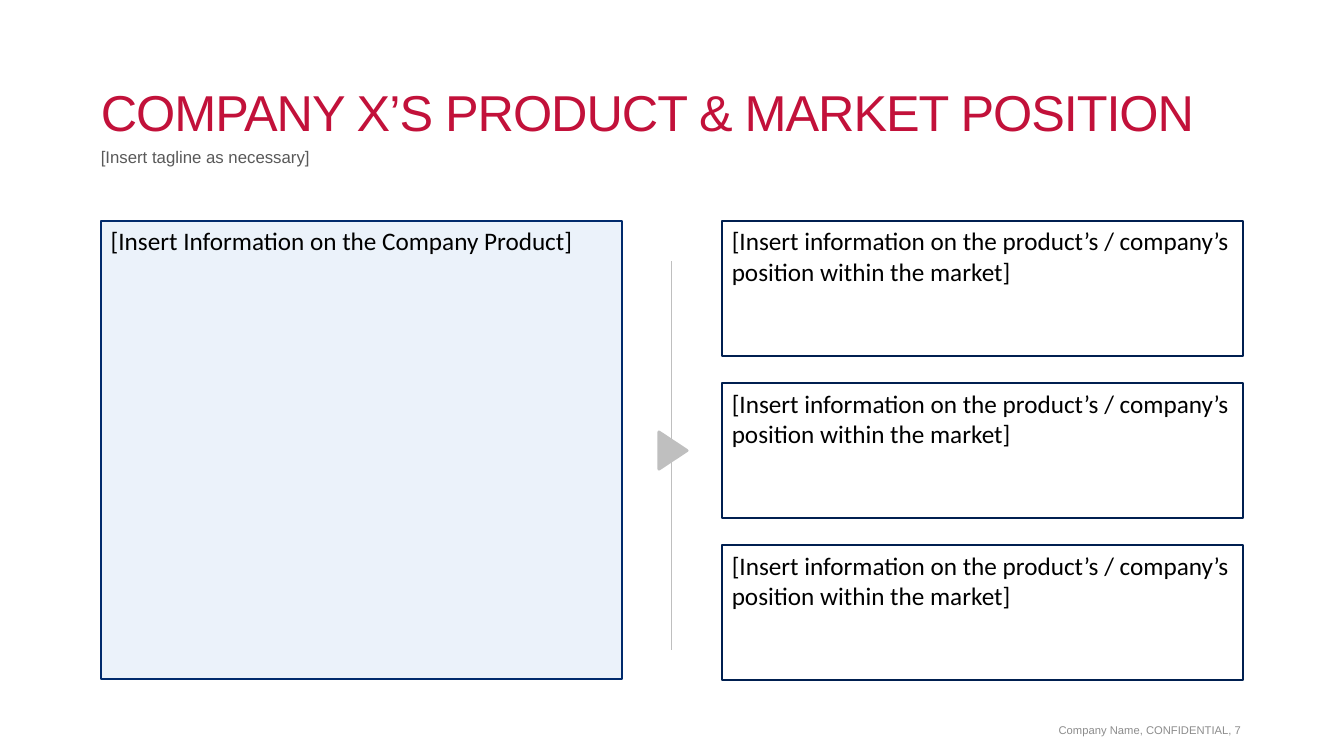
from lxml import etree
from pptx import Presentation
from pptx.dml.color import RGBColor
from pptx.enum.shapes import MSO_CONNECTOR, MSO_SHAPE
from pptx.enum.text import MSO_ANCHOR, PP_ALIGN
from pptx.oxml.ns import qn
from pptx.util import Inches, Pt

LEFT, RIGHT = PP_ALIGN.LEFT, PP_ALIGN.RIGHT
TOP, MIDDLE, BOTTOM = MSO_ANCHOR.TOP, MSO_ANCHOR.MIDDLE, MSO_ANCHOR.BOTTOM

# Content
TITLE = "COMPANY X’S PRODUCT & MARKET POSITION"
TAGLINE = "[Insert tagline as necessary]"
FOOTER = "Company Name, CONFIDENTIAL, 7"
PRODUCT = "[Insert Information on the Company Product]"
POSITIONS = ["[Insert information on the product’s / company’s position within the market]"] * 3

# Layout in inches
MARGIN, TEXT_WIDTH = 1, 11.33
BOX_TOP, BOX_WIDTH = 2.19, 5.17
PRODUCT_HEIGHT = 4.55
POSITION_LEFT, POSITION_HEIGHT, POSITION_STEP = 7.16, 1.34, 1.61
DIVIDER_X, DIVIDER_TOP, DIVIDER_BOTTOM = 6.66, 2.59, 6.45
GREY = "BFBFBF"


def color(value):
    return RGBColor.from_string(value)


def set_text(shape, text, size, font, fill, align=LEFT, anchor=TOP, spacing=None):
    frame = shape.text_frame
    frame.word_wrap = True
    frame.vertical_anchor = anchor
    paragraph = frame.paragraphs[0]
    paragraph.alignment = align
    run = paragraph.add_run()
    run.text = text
    paragraph.font.size = Pt(size)
    paragraph.font.name = font
    paragraph.font.color.rgb = color(fill)
    if spacing:
        run.font._element.set("spc", str(round(spacing * 100)))
    return paragraph


def add_text(slide, box, text, size, fill, insets=(0, 0, 0, 0), **options):
    shape = slide.shapes.add_textbox(*map(Inches, box))
    frame = shape.text_frame
    (frame.margin_left, frame.margin_top,
     frame.margin_right, frame.margin_bottom) = map(Inches, insets)
    return set_text(shape, text, size, "Arial", fill, **options)


def add_shape(slide, kind, box, fill, line, line_width):
    shape = slide.shapes.add_shape(kind, *map(Inches, box))
    shape.shadow.inherit = False
    if fill:
        shape.fill.solid()
        shape.fill.fore_color.rgb = color(fill)
    else:
        shape.fill.background()
    shape.line.color.rgb = color(line)
    shape.line.width = Pt(line_width)
    return shape


def add_box(slide, box, text, fill, line):
    shape = add_shape(slide, MSO_SHAPE.RECTANGLE, box, fill, line, 1.5)
    set_text(shape, text, 18, "Calibri", "000000")


def main():
    presentation = Presentation()
    presentation.slide_width = Inches(13.33)
    presentation.slide_height = Inches(7.5)
    slide = presentation.slides.add_slide(presentation.slide_layouts[6])

    # Headings and footer
    title = add_text(slide, (MARGIN, 0.76, TEXT_WIDTH, 0.65), TITLE, 36, "C2113A",
                     insets=(0, 0.05, 0, 0), anchor=BOTTOM, spacing=-0.75)
    title.line_spacing = 0.9
    tagline = add_text(slide, (MARGIN, 1.48, TEXT_WIDTH, 0.52), TAGLINE, 12, "595959")
    tagline.line_spacing = 0.9
    tagline.space_before = Pt(7.5)
    add_text(slide, (9.41, 7.14, 3, 0.21), FOOTER, 8, "8C8C8C",
             insets=(0.1, 0.05, 0.1, 0.05), align=RIGHT, anchor=MIDDLE)

    # Product box and market position boxes
    add_box(slide, (MARGIN, BOX_TOP, BOX_WIDTH, PRODUCT_HEIGHT), PRODUCT, "EBF2FA", "002A6C")
    for index, text in enumerate(POSITIONS):
        top = BOX_TOP + index * POSITION_STEP
        add_box(slide, (POSITION_LEFT, top, BOX_WIDTH, POSITION_HEIGHT), text, None, "001F50")

    # Divider with arrowhead
    divider = slide.shapes.add_connector(
        MSO_CONNECTOR.STRAIGHT, Inches(DIVIDER_X), Inches(DIVIDER_TOP),
        Inches(DIVIDER_X), Inches(DIVIDER_BOTTOM))
    divider.line.color.rgb = color(GREY)
    divider.line.width = Pt(0.75)
    etree.SubElement(divider._element.spPr, qn("a:effectLst"))
    arrow = add_shape(slide, MSO_SHAPE.ISOSCELES_TRIANGLE, (6.49, 4.33, 0.37, 0.28), GREY, GREY, 2)
    arrow.rotation = 90

    presentation.save("out.pptx")


if __name__ == "__main__":
    main()
